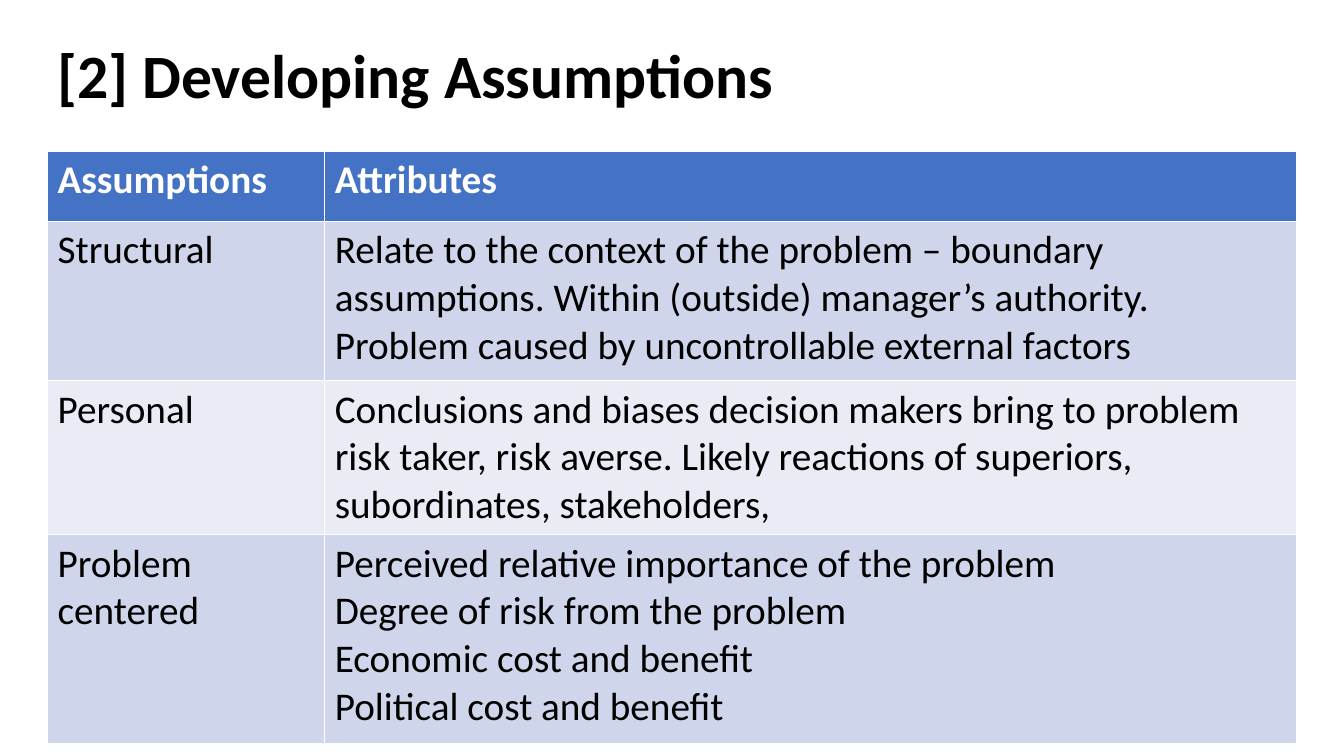
from pptx import Presentation
from pptx.dml.color import RGBColor
from pptx.enum.text import MSO_ANCHOR
from pptx.util import Pt

MIDDLE = MSO_ANCHOR.MIDDLE
BLACK, WHITE = "000000", "FFFFFF"
HEADER_BLUE, BAND_DARK, BAND_LIGHT = "4472C4", "CFD5EA", "E9EBF5"


def color(hex_code):
    return RGBColor.from_string(hex_code)


def write(frame, text, size=28, bold=False, ink=BLACK, spacing=None):
    """Fill a text frame, one paragraph per line of text."""
    frame.word_wrap = True
    frame.text = text
    for paragraph in frame.paragraphs:
        paragraph.line_spacing = spacing
        for run in paragraph.runs:
            run.font.name = "Calibri"
            run.font.size = Pt(size)
            run.font.bold = bold
            run.font.color.rgb = color(ink)


prs = Presentation()
prs.slide_width, prs.slide_height = Pt(960), Pt(540)
slide = prs.slides.add_slide(prs.slide_layouts[6])

# Title
title = slide.shapes.add_textbox(Pt(34), Pt(3.6), Pt(828), Pt(104.4))
title.text_frame.vertical_anchor = MIDDLE
write(title.text_frame, "[2] Developing Assumptions", size=44, bold=True, spacing=0.9)

# Assumptions and their attributes
assumptions = [
    ("Assumptions", "Attributes"),
    ("Structural",
     "Relate to the context of the problem – boundary assumptions. "
     "Within (outside) manager’s authority. "
     "Problem caused by uncontrollable external factors"),
    ("Personal",
     "Conclusions and biases decision makers bring to problem risk taker, "
     "risk averse. Likely reactions of superiors, subordinates, stakeholders,"),
    ("Problem centered",
     "Perceived relative importance of the problem\n"
     "Degree of risk from the problem\n"
     "Economic cost and benefit\n"
     "Political cost and benefit"),
]
column_widths = [198, 694]
row_heights = [50, 114, 110, 149]

# Table: the default style supplies the white rules between cells
table = slide.shapes.add_table(
    len(assumptions), len(column_widths),
    Pt(34), Pt(108), Pt(sum(column_widths)), Pt(sum(row_heights))).table
for column, width in zip(table.columns, column_widths):
    column.width = Pt(width)

for r, (entry, height) in enumerate(zip(assumptions, row_heights)):
    table.rows[r].height = Pt(height)
    is_header = r == 0
    band = HEADER_BLUE if is_header else BAND_DARK if r % 2 else BAND_LIGHT
    for c, text in enumerate(entry):
        cell = table.cell(r, c)
        cell.fill.solid()
        cell.fill.fore_color.rgb = color(band)
        write(cell.text_frame, text, bold=is_header, ink=WHITE if is_header else BLACK)

prs.save("out.pptx")
